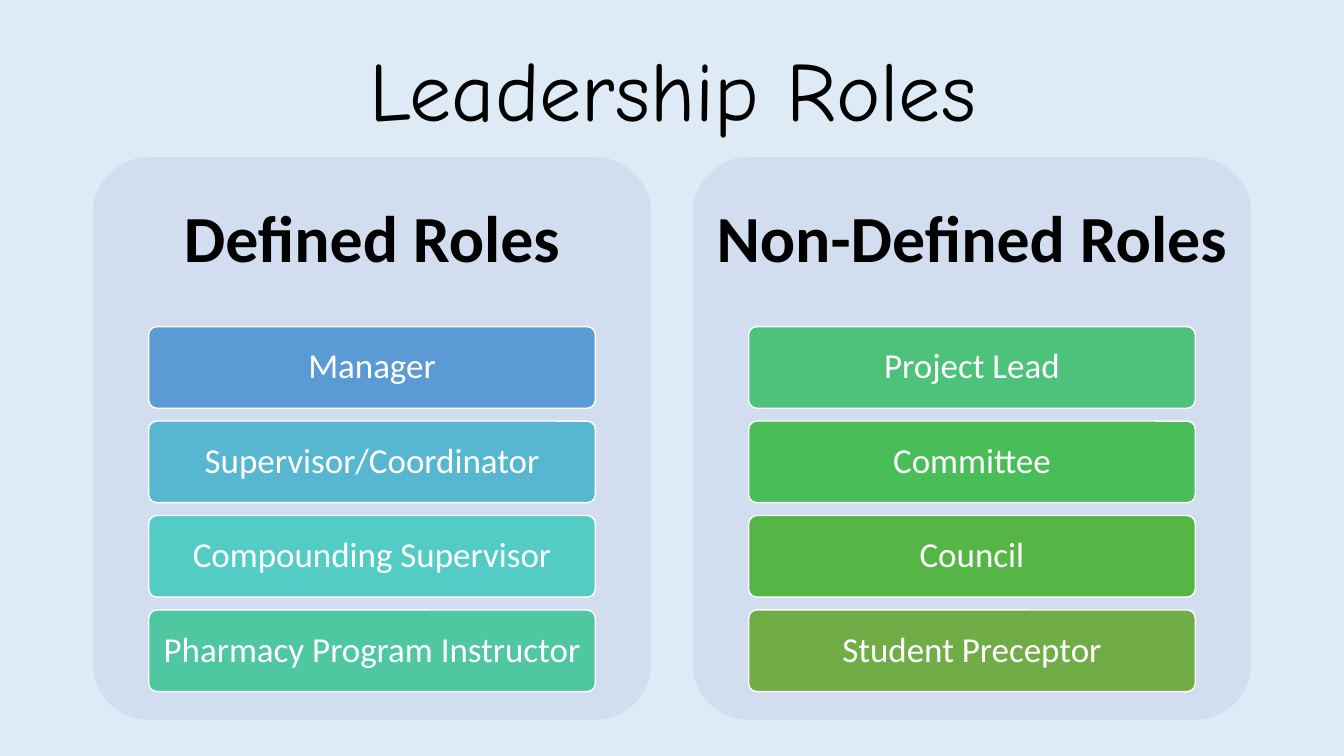
from dataclasses import dataclass

from pptx import Presentation
from pptx import util as u
from pptx.dml.color import RGBColor
from pptx.enum import shapes, text

BLACK, WHITE = "000000", "FFFFFF"
BACKGROUND, PANEL_FILL = "DEEBF7", "D2DEEF"

PANEL_LEFT, PANEL_TOP, PANEL_WIDTH, PANEL_HEIGHT = 0.92, 1.56, 5.54, 5.58
PANEL_PITCH = 5.95
HEADING_HEIGHT = 1.67
ROLE_TOP, ROLE_WIDTH, ROLE_HEIGHT = 3.24, 4.43, 0.81
ROLE_PITCH = 0.937


@dataclass
class Role:
    name: str
    fill: str


@dataclass
class Panel:
    heading: str
    roles: list[Role]


PANELS = [
    Panel("Defined Roles", [
        Role("Manager", "5B9BD5"),
        Role("Supervisor/Coordinator", "57B7D1"),
        Role("Compounding Supervisor", "53CCC5"),
        Role("Pharmacy Program Instructor", "4FC7A0"),
    ]),
    Panel("Non-Defined Roles", [
        Role("Project Lead", "4CC27B"),
        Role("Committee", "48BD58"),
        Role("Council", "55B646"),
        Role("Student Preceptor", "70AD47"),
    ]),
]


def set_fill(target, color: str) -> None:
    target.fill.solid()
    target.fill.fore_color.rgb = RGBColor.from_string(color)


def write(box, words: str, *, size: float, color: str, font: str = "Calibri",
          bold: bool = False, inset: tuple[float, float] = (0.1, 0.05)) -> None:
    """Put one centred paragraph in a box; inset is (sides, top and bottom)."""
    frame = box.text_frame
    frame.word_wrap = True
    frame.auto_size = text.MSO_AUTO_SIZE.NONE
    frame.vertical_anchor = text.MSO_ANCHOR.MIDDLE
    frame.margin_left = frame.margin_right = u.Inches(inset[0])
    frame.margin_top = frame.margin_bottom = u.Inches(inset[1])
    para = frame.paragraphs[0]
    para.alignment = text.PP_ALIGN.CENTER
    para.line_spacing = 0.9
    span = para.add_run()
    span.text = words
    span.font.name = font
    span.font.size = u.Pt(size)
    span.font.bold = bold
    span.font.color.rgb = RGBColor.from_string(color)


def add_rounded(page, left: float, top: float, width: float, height: float,
                fill: str, outline: str | None = None):
    box = page.shapes.add_shape(shapes.MSO_SHAPE.ROUNDED_RECTANGLE,
                                *map(u.Inches, (left, top, width, height)))
    box.adjustments[0] = 0.1
    box.shadow.inherit = False
    set_fill(box, fill)
    if outline:
        box.line.color.rgb = RGBColor.from_string(outline)
        box.line.width = u.Pt(1)
    else:
        box.line.fill.background()
    return box


def add_panel(page, panel: Panel, left: float) -> None:
    add_rounded(page, left, PANEL_TOP, PANEL_WIDTH, PANEL_HEIGHT, PANEL_FILL)
    heading = page.shapes.add_textbox(
        *map(u.Inches, (left, PANEL_TOP, PANEL_WIDTH, HEADING_HEIGHT)))
    write(heading, panel.heading, size=47, color=BLACK, bold=True, inset=(0.2, 0.2))

    role_left = left + (PANEL_WIDTH - ROLE_WIDTH) / 2
    for row, role in enumerate(panel.roles):
        bar = add_rounded(page, role_left, ROLE_TOP + row * ROLE_PITCH,
                          ROLE_WIDTH, ROLE_HEIGHT, role.fill, WHITE)
        write(bar, role.name, size=25, color=WHITE, inset=(0.07, 0.05))


def main() -> None:
    deck = Presentation()
    deck.slide_width, deck.slide_height = u.Inches(13.33), u.Inches(7.5)
    page = deck.slides.add_slide(deck.slide_layouts.get_by_name("Title Only"))
    set_fill(page.background, BACKGROUND)

    # Title
    title = page.shapes.title
    title.left, title.top = u.Inches(0.92), u.Inches(0.32)
    title.width, title.height = u.Inches(11.5), u.Inches(1.24)
    write(title, "Leadership Roles", size=60, color=BLACK, font="Comic Neue")

    # Role panels
    for column, panel in enumerate(PANELS):
        add_panel(page, panel, PANEL_LEFT + column * PANEL_PITCH)

    deck.save("out.pptx")


if __name__ == "__main__":
    main()
